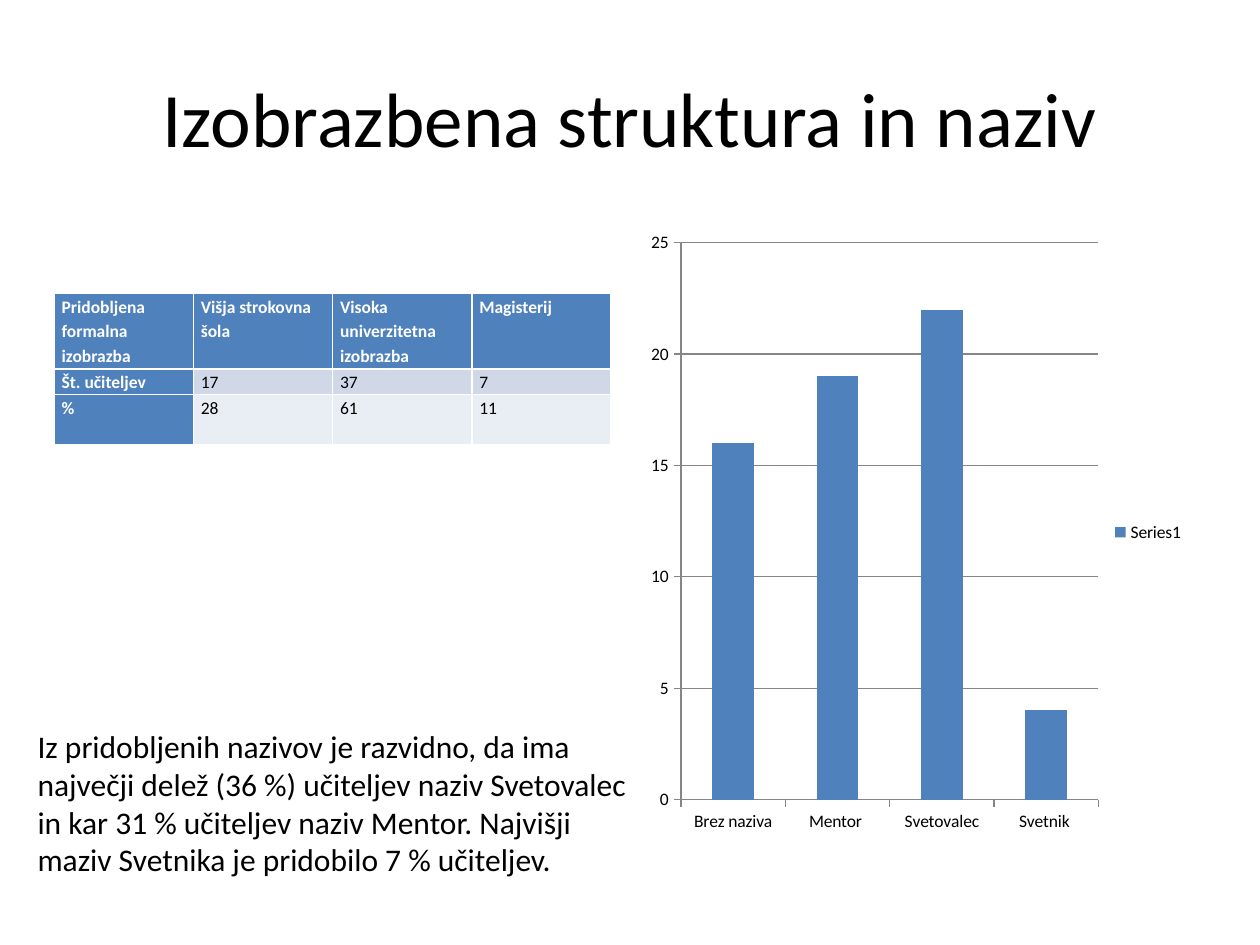
from pptx import Presentation
from pptx.chart.data import CategoryChartData
from pptx.dml.color import RGBColor
from pptx.enum.chart import XL_CHART_TYPE, XL_LEGEND_POSITION, XL_TICK_MARK
from pptx.enum.text import MSO_ANCHOR, PP_ALIGN
from pptx.util import Inches, Pt

FONT = "Calibri"
BLACK = RGBColor(0x00, 0x00, 0x00)
WHITE = RGBColor(0xFF, 0xFF, 0xFF)
BLUE = RGBColor(0x4F, 0x81, 0xBD)
BAND_DARK = RGBColor(0xD0, 0xD8, 0xE8)
BAND_LIGHT = RGBColor(0xE9, 0xED, 0xF4)
GRAY = RGBColor(0x86, 0x86, 0x86)

ROWS = [
    ["Pridobljena formalna izobrazba", "Višja strokovna šola",
     "Visoka univerzitetna\nizobrazba", "Magisterij"],
    ["Št. učiteljev", "17", "37", "7"],
    ["%", "28", "61", "11"],
]
ROW_HEIGHTS = [0.6, 0.2, 0.4]
TITLES = {"Brez naziva": 16, "Mentor ": 19, "Svetovalec": 22, "Svetnik ": 4}
SUMMARY = (
    "Iz pridobljenih nazivov je razvidno, da ima največji delež (36 %) "
    "učiteljev naziv Svetovalec in kar 31 % učiteljev naziv Mentor. "
    "Najvišji maziv Svetnika je pridobilo 7 % učiteljev."
)


def set_font(font, size, color, bold=False):
    font.name = FONT
    font.size = Pt(size)
    font.bold = bold
    font.color.rgb = color


def place_title(s, x, y, w, h):
    title = s.shapes.title
    title.left, title.top, title.width, title.height = map(Inches, (x, y, w, h))
    tf = title.text_frame
    tf.text = "Izobrazbena struktura in naziv"
    tf.vertical_anchor = MSO_ANCHOR.MIDDLE
    p = tf.paragraphs[0]
    p.alignment = PP_ALIGN.CENTER
    set_font(p.font, 44, BLACK)


def add_education_table(s, x, y, w, h):
    table = s.shapes.add_table(len(ROWS), len(ROWS[0]), Inches(x), Inches(y),
                               Inches(w), Inches(h)).table
    table.first_col = True
    for col in table.columns:
        col.width = Inches(w / len(ROWS[0]))
    for i, row in enumerate(ROWS):
        table.rows[i].height = Inches(ROW_HEIGHTS[i])
        for j, text in enumerate(row):
            cell = table.cell(i, j)
            header = i == 0 or j == 0
            cell.fill.solid()
            cell.fill.fore_color.rgb = (
                BLUE if header else BAND_DARK if i % 2 else BAND_LIGHT)
            cell.margin_left = cell.margin_right = Inches(0.06)
            cell.margin_top = cell.margin_bottom = 0
            cell.text = text
            for p in cell.text_frame.paragraphs:
                p.line_spacing = 1.15
                set_font(p.font, 10, WHITE if header else BLACK, header)


def add_titles_chart(s, x, y, w, h):
    data = CategoryChartData()
    data.categories = list(TITLES)
    data.add_series("Series1", list(TITLES.values()))
    chart = s.shapes.add_chart(XL_CHART_TYPE.COLUMN_CLUSTERED, Inches(x),
                               Inches(y), Inches(w), Inches(h), data).chart
    set_font(chart.font, 10, BLACK)
    chart.has_title = False
    chart.has_legend = True
    chart.legend.position = XL_LEGEND_POSITION.RIGHT
    chart.legend.include_in_layout = False

    # Columns
    plot = chart.plots[0]
    plot.gap_width = 150
    plot.vary_by_categories = False
    fill = plot.series[0].format.fill
    fill.solid()
    fill.fore_color.rgb = BLUE

    # Axes and gridlines
    for axis in (chart.category_axis, chart.value_axis):
        axis.major_tick_mark = XL_TICK_MARK.OUTSIDE
        axis.format.line.color.rgb = GRAY
    axis = chart.value_axis
    axis.minimum_scale, axis.maximum_scale, axis.major_unit = 0, 25, 5
    axis.has_major_gridlines = True
    axis.major_gridlines.format.line.color.rgb = GRAY


def add_summary(s, x, y, w, h):
    tf = s.shapes.add_textbox(Inches(x), Inches(y), Inches(w), Inches(h)).text_frame
    tf.word_wrap = True
    tf.text = SUMMARY
    set_font(tf.paragraphs[0].font, 18, BLACK)


def main():
    prs = Presentation()
    prs.slide_width, prs.slide_height = Inches(10), Inches(7.5)
    s = prs.slides.add_slide(prs.slide_layouts[5])
    place_title(s, 0.5, 0.3, 9, 1.25)
    add_education_table(s, 0.43, 2.33, 4.42, sum(ROW_HEIGHTS))
    add_titles_chart(s, 5.08, 1.75, 4.42, 4.95)
    add_summary(s, 0.2, 5.72, 5, 1.31)
    prs.save("out.pptx")


if __name__ == "__main__":
    main()
